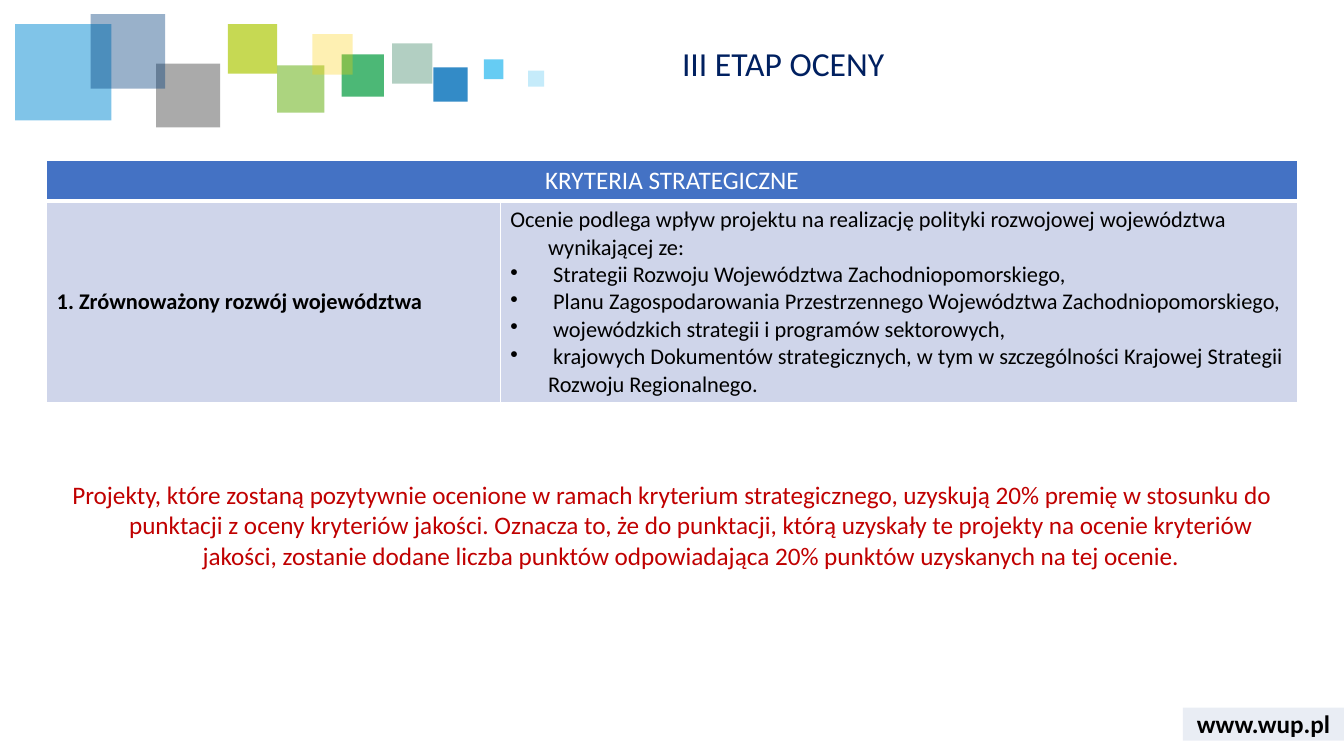
from dataclasses import dataclass

import pptx
import pptx.dml.color
import pptx.enum.shapes
import pptx.enum.text
import pptx.oxml
import pptx.oxml.ns
import pptx.util

Pt = pptx.util.Pt
RGB = pptx.dml.color.RGBColor.from_string
ALIGN = pptx.enum.text.PP_ALIGN
ANCHOR = pptx.enum.text.MSO_ANCHOR
AUTO_SIZE = pptx.enum.text.MSO_AUTO_SIZE
RECTANGLE = pptx.enum.shapes.MSO_SHAPE.RECTANGLE


@dataclass(frozen=True)
class Theme:
    font: str = "Calibri"
    title_size: int = 24
    text_size: int = 18
    cell_size: int = 16
    navy: str = "002060"
    red: str = "C00000"
    black: str = "000000"
    white: str = "FFFFFF"
    header: str = "4472C4"
    body: str = "CFD5EA"
    address_bar: str = "2F5597"


theme = Theme()
HANGING = 27


def write(paragraph, text, *, size, color=theme.black, bold=False,
          align=ALIGN.LEFT, hanging=0, bullet=None):
    properties = paragraph._p.get_or_add_pPr()
    properties.set("marL", str(Pt(hanging)))
    properties.set("indent", str(Pt(-hanging)))
    if bullet:
        mark = pptx.oxml.parse_xml(
            f'<a:buChar {pptx.oxml.ns.nsdecls("a")} char="{bullet}"/>')
        properties.append(mark)
    paragraph.alignment = align
    run = paragraph.add_run()
    run.text = text
    run.font.name = theme.font
    run.font.size = Pt(size)
    run.font.bold = bold
    run.font.color.rgb = RGB(color)


def add_tint(shapes, left, top, width, height, color, opacity):
    """Add a borderless rectangle whose opacity is given in percent."""
    tint = shapes.add_shape(RECTANGLE, Pt(left), Pt(top), Pt(width), Pt(height))
    tint.shadow.inherit = False
    tint.line.fill.background()
    tint.fill.solid()
    tint.fill.fore_color.rgb = RGB(color)
    color_node = tint._element.spPr.find(".//" + pptx.oxml.ns.qn("a:srgbClr"))
    color_node.append(pptx.oxml.parse_xml(
        f'<a:alpha {pptx.oxml.ns.nsdecls("a")} val="{opacity * 1000}"/>'))


deck = pptx.Presentation()
deck.slide_width, deck.slide_height = Pt(960), Pt(540)
slide = deck.slides.add_slide(deck.slide_layouts[5])

# Left, top, side, colour, opacity
mosaic_squares = [
    (280.1, 31, 28.8, "006138", 30),
    (309.6, 48.2, 24.5, "006EB9", 80),
    (244.1, 38.9, 30.2, "009A3C", 70),
    (10.8, 17.3, 68.8, "028BD3", 50),
    (198, 46.8, 33.8, "75B82A", 60),
    (111.6, 45.4, 45.7, "575757", 50),
    (64.8, 10.1, 53.3, "003D7C", 40),
    (345.6, 42.5, 14, "40C0F1", 80),
    (162.7, 17.3, 35.3, "AFCA0B", 70),
    (223.2, 24.5, 28.8, "FED000", 30),
    (377.3, 50.4, 11.5, "40C0F1", 30),
]
mosaic = slide.shapes.add_group_shape()
for left, top, side, color, opacity in mosaic_squares:
    add_tint(mosaic.shapes, left, top, side, side, color, opacity)

# Web address
add_tint(slide.shapes, 845, 505.5, 115, 23.5, theme.address_bar, 10)
address = slide.shapes.add_textbox(Pt(845), Pt(502), Pt(115), Pt(29)).text_frame
address.word_wrap = True
address.vertical_anchor = ANCHOR.MIDDLE
write(address.paragraphs[0], "www.wup.pl", size=theme.text_size, bold=True,
      align=ALIGN.CENTER)

# Title
title = slide.shapes.title
title.left, title.top, title.width, title.height = Pt(480), Pt(30), Pt(458), Pt(40)
title.text_frame.vertical_anchor = ANCHOR.TOP
title.text_frame.auto_size = AUTO_SIZE.NONE
title.text_frame.paragraphs[0].line_spacing = 0.9
write(title.text_frame.paragraphs[0], "III ETAP OCENY", size=theme.title_size,
      color=theme.navy)

# Strategic criteria
criteria = slide.shapes.add_table(2, 2, Pt(33.3), Pt(114.8), Pt(893.5), Pt(173)).table
criteria.horz_banding = False
criteria.columns[0].width, criteria.columns[1].width = Pt(324), Pt(569.5)
criteria.rows[0].height, criteria.rows[1].height = Pt(29), Pt(144)
for row_index, fill in enumerate([theme.header, theme.body]):
    for cell in criteria.rows[row_index].cells:
        cell_properties = cell._tc.get_or_add_tcPr()
        for edge in "LRTB":
            weight = 3 if row_index == 0 and edge == "B" else 1
            cell_properties.append(pptx.oxml.parse_xml(
                f'<a:ln{edge} {pptx.oxml.ns.nsdecls("a")} w="{Pt(weight)}">'
                f'<a:solidFill><a:srgbClr val="{theme.white}"/></a:solidFill>'
                f'</a:ln{edge}>'))
        cell.fill.solid()
        cell.fill.fore_color.rgb = RGB(fill)

heading = criteria.cell(0, 0)
heading.merge(criteria.cell(0, 1))
write(heading.text_frame.paragraphs[0], "KRYTERIA STRATEGICZNE",
      size=theme.text_size, color=theme.white, align=ALIGN.CENTER)

criterion = criteria.cell(1, 0)
criterion.vertical_anchor = ANCHOR.MIDDLE
write(criterion.text_frame.paragraphs[0], "1. Zrównoważony rozwój województwa",
      size=theme.cell_size, bold=True)

description = criteria.cell(1, 1).text_frame
write(description.paragraphs[0],
      "Ocenie podlega wpływ projektu na realizację polityki rozwojowej "
      "województwa wynikającej ze:",
      size=theme.cell_size, hanging=HANGING)
policy_documents = [
    " Strategii Rozwoju Województwa Zachodniopomorskiego,",
    " Planu Zagospodarowania Przestrzennego Województwa Zachodniopomorskiego,",
    " wojewódzkich strategii i programów sektorowych,",
    " krajowych Dokumentów strategicznych, w tym w szczególności Krajowej "
    "Strategii Rozwoju Regionalnego.",
]
for document in policy_documents:
    write(description.add_paragraph(), document, size=theme.cell_size,
          hanging=HANGING, bullet="•")

# Bonus rule
bonus = slide.shapes.add_textbox(Pt(33.3), Pt(339), Pt(893.5), Pt(73)).text_frame
bonus.word_wrap = True
bonus.auto_size = AUTO_SIZE.SHAPE_TO_FIT_TEXT
write(bonus.paragraphs[0],
      "Projekty, które zostaną pozytywnie ocenione w ramach kryterium "
      "strategicznego, uzyskują 20% premię w stosunku do punktacji z oceny "
      "kryteriów jakości. Oznacza to, że do punktacji, którą uzyskały te projekty "
      "na ocenie kryteriów jakości, zostanie dodane liczba punktów odpowiadająca "
      "20% punktów uzyskanych na tej ocenie.",
      size=theme.text_size, color=theme.red, align=ALIGN.CENTER, hanging=HANGING)

deck.save("out.pptx")
